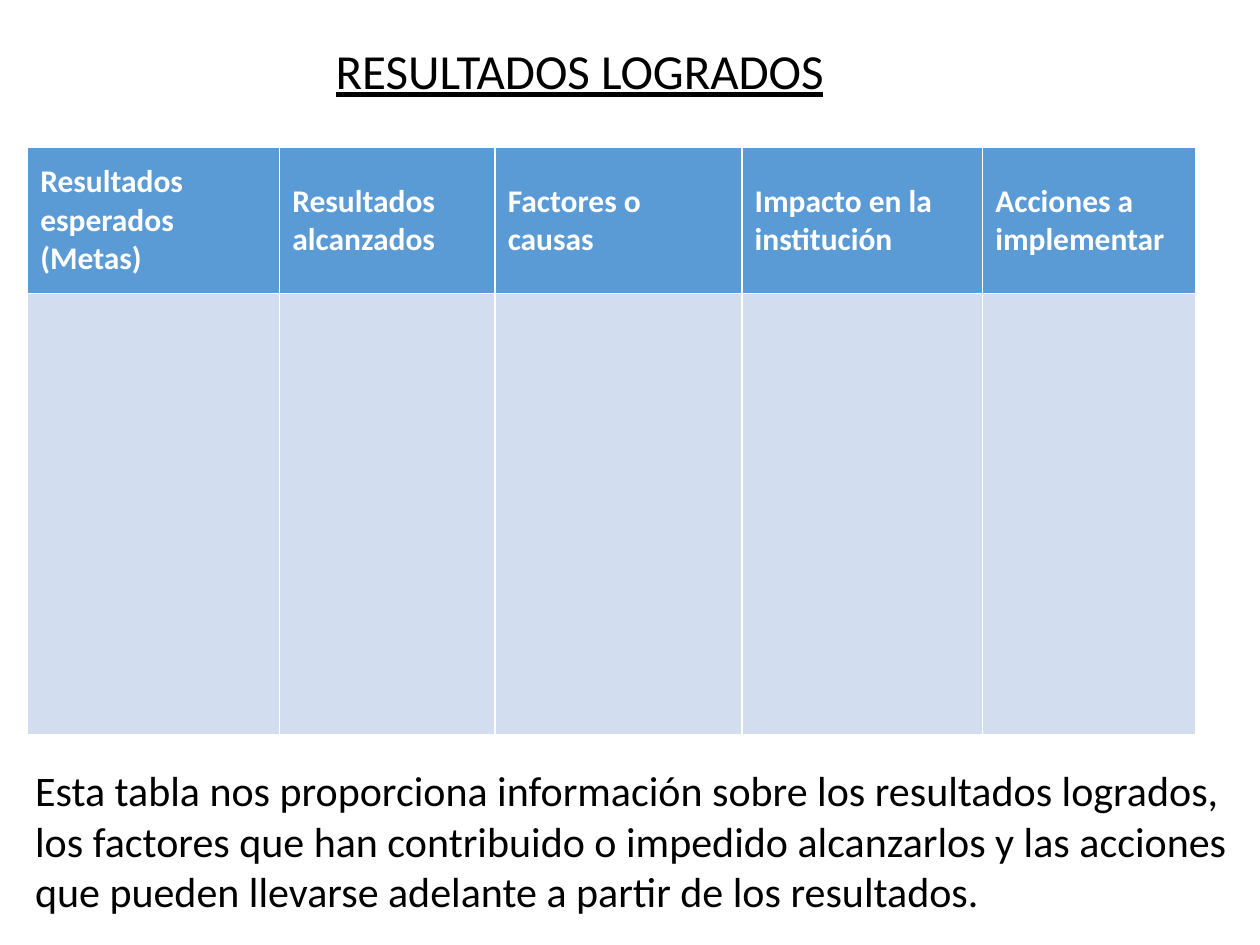
from dataclasses import dataclass

from pptx import Presentation
from pptx.dml.color import RGBColor
from pptx.enum.text import MSO_ANCHOR, MSO_AUTO_SIZE, PP_ALIGN
from pptx.util import Inches, Pt

MIDDLE = MSO_ANCHOR.MIDDLE
TOP = MSO_ANCHOR.TOP
NO_FIT = MSO_AUTO_SIZE.NONE
CENTER = PP_ALIGN.CENTER
JUSTIFY = PP_ALIGN.JUSTIFY
TITLE_ONLY = 5


@dataclass(frozen=True)
class Theme:
    font: str = "Calibri"
    ink: RGBColor = RGBColor(0, 0, 0)
    white: RGBColor = RGBColor(255, 255, 255)
    head: RGBColor = RGBColor(0x5B, 0x9B, 0xD5)
    band: RGBColor = RGBColor(0xD2, 0xDE, 0xEF)
    title: int = 28
    note: int = 24
    label: int = 18


THEME = Theme()
TITLE = "RESULTADOS LOGRADOS"
HEADS = [
    ("Resultados esperados (Metas)", 2),
    ("Resultados alcanzados", 1.71),
    ("Factores o causas", 1.96),
    ("Impacto en la institución", 1.91),
    ("Acciones a implementar", 1.69),
]
ROWS = [1.16, 3.5]
NOTE = [
    "Esta tabla nos proporciona información sobre los resultados logrados,",
    "los factores que han contribuido o impedido alcanzarlos y las acciones",
    "que pueden llevarse adelante a partir de los resultados.",
]


def style(para, size, color):
    para.font.name = THEME.font
    para.font.size = Pt(size)
    para.font.color.rgb = color


def add_title(slide, box):
    shape = slide.shapes.title
    shape.left, shape.top, shape.width, shape.height = map(Inches, box)
    frame = shape.text_frame
    frame.text = TITLE
    frame.auto_size = NO_FIT
    frame.vertical_anchor = TOP
    para = frame.paragraphs[0]
    para.alignment = CENTER
    style(para, THEME.title, THEME.ink)
    para.font.underline = True


def add_grid(slide, box):
    table = slide.shapes.add_table(len(ROWS), len(HEADS), *map(Inches, box)).table
    for row, height in zip(table.rows, ROWS):
        row.height = Inches(height)
    for col, (label, width) in enumerate(HEADS):
        table.columns[col].width = Inches(width)
        head, body = table.cell(0, col), table.cell(1, col)
        for cell, color in ((head, THEME.head), (body, THEME.band)):
            cell.fill.solid()
            cell.fill.fore_color.rgb = color
        head.text = label
        head.vertical_anchor = MIDDLE
        para = head.text_frame.paragraphs[0]
        style(para, THEME.label, THEME.white)
        para.font.bold = True


def add_note(slide, box):
    frame = slide.shapes.add_textbox(*map(Inches, box)).text_frame
    frame.word_wrap = False
    frame.text = "\n".join(NOTE)
    for para in frame.paragraphs:
        para.alignment = JUSTIFY
        style(para, THEME.note, THEME.ink)


def main():
    deck = Presentation()
    deck.slide_width, deck.slide_height = Inches(10), Inches(7.5)
    slide = deck.slides.add_slide(deck.slide_layouts[TITLE_ONLY])
    add_grid(slide, (0.22, 1.17, 9.27, 4.66))
    add_title(slide, (0.65, 0.27, 7.9, 0.57))
    add_note(slide, (0.18, 6.02, 9.82, 1.31))
    deck.save("out.pptx")


if __name__ == "__main__":
    main()
